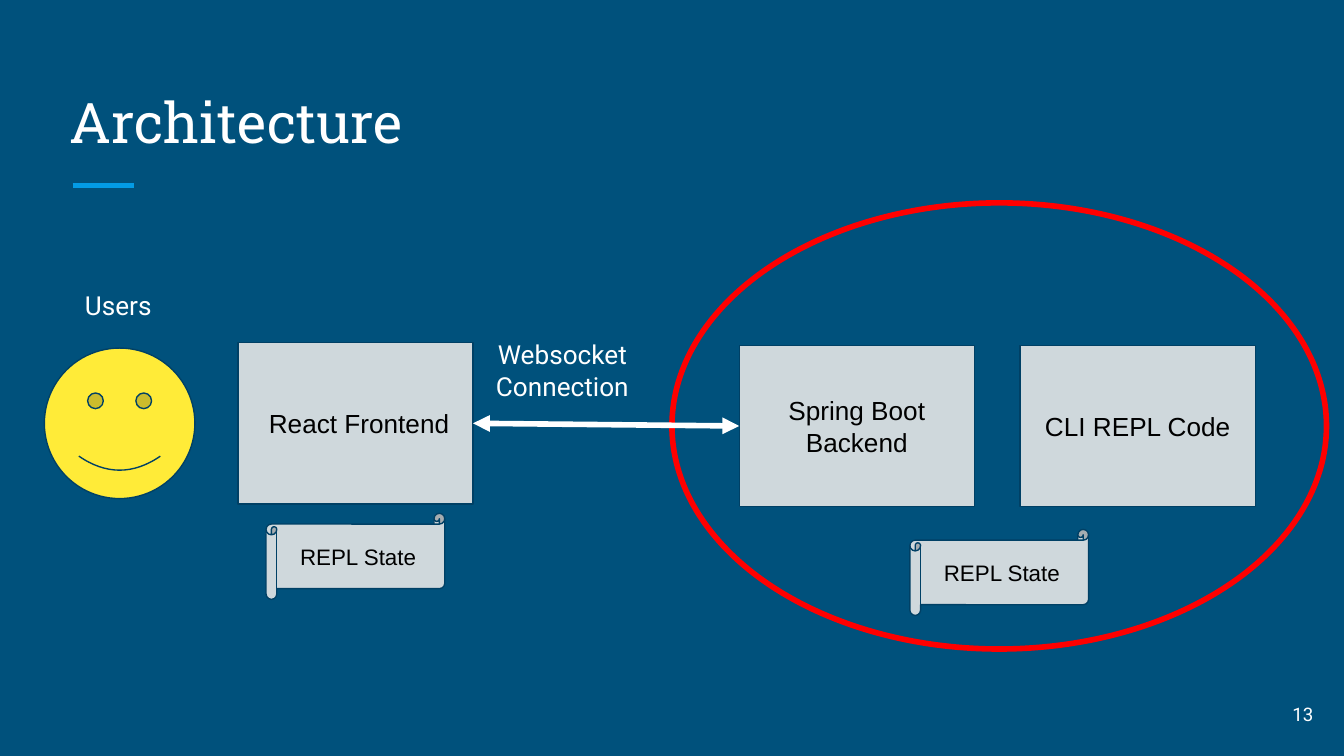
"""Build the architecture slide, with lengths as percentages of the slide's size."""
import dataclasses
import typing

import lxml.etree
import pptx
import pptx.dml.color
import pptx.enum.shapes
import pptx.enum.text
import pptx.oxml.ns
import pptx.util

RGBColor = pptx.dml.color.RGBColor
Kind = pptx.enum.shapes.MSO_SHAPE
Align = pptx.enum.text.PP_ALIGN
Anchor = pptx.enum.text.MSO_ANCHOR
Fit = pptx.enum.text.MSO_AUTO_SIZE

NAVY = RGBColor(0x00, 0x51, 0x7C)
EDGE = RGBColor(0x00, 0x40, 0x65)
BLUE = RGBColor(0x03, 0x9B, 0xE5)
GREY = RGBColor(0xCF, 0xD8, 0xDC)
GOLD = RGBColor(0xFF, 0xEB, 0x38)
RED = RGBColor(0xFF, 0x00, 0x00)
WHITE = RGBColor(0xFF, 0xFF, 0xFF)
BLACK = RGBColor(0x00, 0x00, 0x00)

WIDE = pptx.util.Inches(10)
HIGH = WIDE * 9 // 16
BLOCK = (17.5, 21.33)
SCROLL = (13.3, 11.38)


class Area(typing.NamedTuple):
    left: float
    top: float
    width: float
    height: float


@dataclasses.dataclass
class Style:
    size: float
    font: str = "Roboto"
    color: RGBColor = WHITE
    align: Align = Align.CENTER
    anchor: Anchor = Anchor.TOP
    fit: Fit = Fit.NONE


@dataclasses.dataclass
class Node:
    area: Area
    kind: Kind
    text: str = ""
    size: float = 14
    fill: typing.Optional[RGBColor] = GREY
    line: RGBColor = EDGE
    weight: float = 0.75


@dataclasses.dataclass
class Label:
    area: Area
    text: str
    style: Style


def across(share: float) -> int:
    return round(WIDE * share / 100)


def down(share: float) -> int:
    return round(HIGH * share / 100)


def place(area: Area) -> tuple:
    return across(area.left), down(area.top), across(area.width), down(area.height)


def write(shape, text: str, style: Style) -> None:
    frame = shape.text_frame
    frame.word_wrap = True
    frame.auto_size = style.fit
    frame.vertical_anchor = style.anchor
    for side in ("left", "top", "right", "bottom"):
        setattr(frame, f"margin_{side}", pptx.util.Inches(0.1))
    para = frame.paragraphs[0]
    para.alignment = style.align
    run = para.add_run()
    run.text = text
    run.font.size = pptx.util.Pt(style.size)
    run.font.name = style.font
    run.font.color.rgb = style.color


def draw_node(slide, node: Node):
    shape = slide.shapes.add_shape(node.kind, *place(node.area))
    shape.shadow.inherit = False
    if node.fill is None:
        shape.fill.background()
    else:
        shape.fill.solid()
        shape.fill.fore_color.rgb = node.fill
    shape.line.color.rgb = node.line
    shape.line.width = pptx.util.Pt(node.weight)
    if node.text:
        write(shape, node.text, Style(node.size, "Arial", BLACK, anchor=Anchor.MIDDLE))
    return shape


def draw_label(slide, label: Label) -> None:
    write(slide.shapes.add_textbox(*place(label.area)), label.text, label.style)


def draw_line(slide, start: tuple, end: tuple, color: RGBColor):
    line = slide.shapes.add_connector(
        pptx.enum.shapes.MSO_CONNECTOR.STRAIGHT,
        across(start[0]), down(start[1]), across(end[0]), down(end[1]))
    line.line.color.rgb = color
    line.line.width = pptx.util.Pt(3)
    lxml.etree.SubElement(line._element.spPr, pptx.oxml.ns.qn("a:effectLst"))
    return line


def add_heads(line) -> None:
    for end in ("a:headEnd", "a:tailEnd"):
        head = lxml.etree.SubElement(line.line._get_or_add_ln(), pptx.oxml.ns.qn(end))
        head.set("type", "triangle")


RING = Node(Area(50, 26.84, 48.7, 59.02), Kind.OVAL, fill=None, line=RED, weight=3)
FACE = Node(Area(3.3, 46.04, 11.2, 19.91), Kind.SMILEY_FACE, fill=GOLD)
FRONT = Node(Area(17.7, 45.33, *BLOCK), Kind.RECTANGLE, " React Frontend")
BACK = Node(Area(55, 45.69, *BLOCK), Kind.RECTANGLE, "Spring Boot Backend")
CODE = Node(Area(75.9, 45.69, *BLOCK), Kind.RECTANGLE, "CLI REPL Code")
STATES = [Node(Area(left, top, *SCROLL), Kind.HORIZONTAL_SCROLL, "REPL State", 12)
          for left, top in ((19.8, 67.91), (67.7, 70.04))]
NOTE = Style(14, fit=Fit.SHAPE_TO_FIT_TEXT)
LABELS = [
    Label(Area(4.6, 36.44, 8.4, 7.82), "Users", NOTE),
    Label(Area(35.2, 43.02, 13.3, 11.91), "Websocket Connection", NOTE),
    Label(Area(92.7, 90.67, 6, 7.64), "13",
          Style(10, align=Align.RIGHT, anchor=Anchor.MIDDLE)),
]


def main() -> None:
    deck = pptx.Presentation()
    deck.slide_width, deck.slide_height = WIDE, HIGH
    slide = deck.slides.add_slide(deck.slide_layouts[5])
    slide.background.fill.solid()
    slide.background.fill.fore_color.rgb = NAVY
    title = slide.shapes.title
    title.left, title.top, title.width, title.height = place(Area(4.2, 8.89, 91.5, 13.33))
    write(title, "Architecture",
          Style(30, "Roboto Slab", align=Align.LEFT, anchor=Anchor.BOTTOM))
    draw_line(slide, (5.4, 24.53), (10, 24.53), BLUE)
    for node in (RING, FACE, CODE, *STATES):
        draw_node(slide, node)
    front, back = draw_node(slide, FRONT), draw_node(slide, BACK)
    link = draw_line(slide, (35.2, 56), (55, 56.36), WHITE)
    link.begin_connect(front, 3)
    link.end_connect(back, 1)
    add_heads(link)
    for label in LABELS:
        draw_label(slide, label)
    deck.save("out.pptx")


if __name__ == "__main__":
    main()
